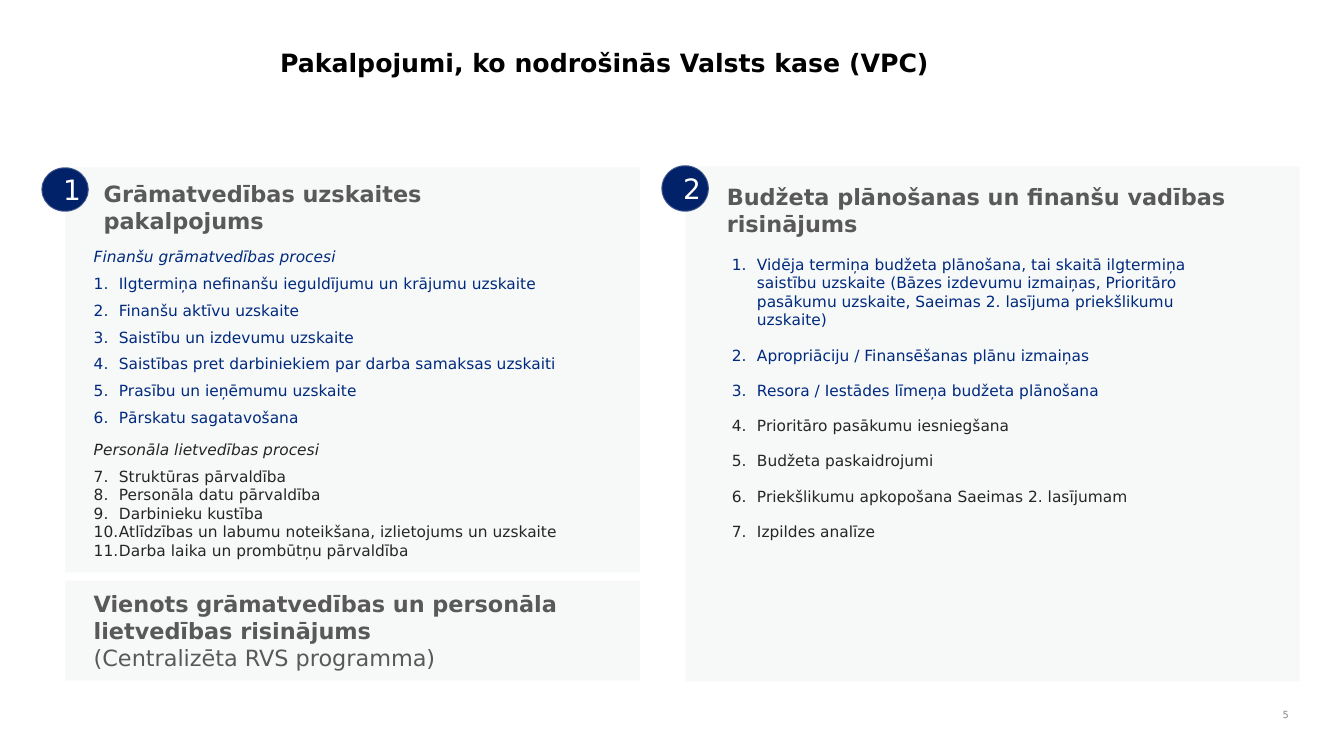
from lxml.etree import SubElement
from pptx import Presentation
from pptx.dml.color import RGBColor
from pptx.enum.shapes import MSO_SHAPE as Shape
from pptx.enum.text import MSO_ANCHOR as Anchor, PP_ALIGN as Align
from pptx.oxml.ns import qn
from pptx.util import Inches, Pt

NAVY, BLUE, DARK, GREY, PANEL = "012169", "002A7E", "262626", "595959", "CFD3D6"
HEADING = dict(size=Pt(16), bold=True)
BODY = dict(size=Pt(11))
ITALIC = dict(BODY, italic=True)
DEFAULT_INSETS = (0.1, 0.05, 0.1, 0.05)
PANEL_INSETS = (0.28, 0, 0.28, 0)


def rgb(color):
    return RGBColor.from_string(color)


class ServiceSlide:
    """Holds the font and the slide, and draws each kind of element on it."""

    def __init__(self, prs, font="DejaVu Sans"):
        self.font = font
        self.shapes = prs.slides.add_slide(prs.slide_layouts[6]).shapes

    def frame(self, shape, insets=DEFAULT_INSETS, anchor=Anchor.TOP):
        text_frame = shape.text_frame
        left, top, right, bottom = map(Inches, insets)
        layout = dict(word_wrap=True, vertical_anchor=anchor, margin_left=left,
                      margin_top=top, margin_right=right, margin_bottom=bottom)
        for name, value in layout.items():
            setattr(text_frame, name, value)
        return text_frame

    def text_box(self, box, anchor=Anchor.TOP):
        return self.frame(self.shapes.add_textbox(*map(Inches, box)), anchor=anchor)

    def shape(self, kind, box, color):
        shape = self.shapes.add_shape(kind, *map(Inches, box))
        shape.shadow.inherit = False
        shape.fill.solid()
        shape.fill.fore_color.rgb = rgb(color)
        return shape

    def opacity(self, properties, percent):
        color = next(properties.iter(qn("a:srgbClr")))
        SubElement(color, qn("a:alpha"), val=str(percent * 1000))

    def panel(self, box):
        panel = self.shape(Shape.RECTANGLE, box, PANEL)
        panel.line.fill.background()
        self.opacity(panel.element.spPr, 15)
        return panel

    def badge(self, box, number):
        badge = self.shape(Shape.OVAL, box, NAVY)
        badge.line.color.rgb = rgb(NAVY)
        badge.line.width = Pt(1.5)
        self.opacity(badge.element.spPr.find(qn("a:ln")), 75)
        frame = self.frame(badge, (0.14, 0.05, 0.1, 0.05), Anchor.MIDDLE)
        self.paragraph(frame, number, "FFFFFF", dict(size=Pt(20)), alignment=Align.CENTER)

    def run(self, paragraph, text, color, style):
        run = paragraph.add_run()
        run.text = text
        run.font.name = self.font
        run.font.color.rgb = rgb(color)
        for name, value in style.items():
            setattr(run.font, name, value)

    def paragraph(self, frame, text, color, style, alignment=Align.LEFT, **spacing):
        last = frame.paragraphs[-1]
        paragraph = frame.add_paragraph() if last.runs else last
        paragraph.alignment = alignment
        for name, value in spacing.items():
            setattr(paragraph, name, Pt(value))
        self.run(paragraph, text, color, style)
        return paragraph

    def numbered(self, frame, items, color, start=1, after=0):
        for item in items:
            paragraph = self.paragraph(frame, item, color, BODY, space_after=after)
            properties = paragraph._p.get_or_add_pPr()
            properties.set("marL", str(Inches(0.25)))
            properties.set("indent", str(-Inches(0.25)))
            SubElement(properties, qn("a:buFont"), typeface=self.font)
            SubElement(properties, qn("a:buAutoNum"), type="arabicPeriod", startAt=str(start))


def main():
    prs = Presentation()
    prs.slide_width, prs.slide_height = Inches(13.33), Inches(7.5)
    slide = ServiceSlide(prs)

    title = slide.text_box((2.68, 0.42, 7.87, 1.13))
    slide.paragraph(title, "Pakalpojumi, ko nodrošinās Valsts kase (VPC)", "000000",
                    dict(size=Pt(18), bold=True))
    page_number = slide.text_box((12.44, 6.92, 0.44, 0.33), Anchor.MIDDLE)
    slide.paragraph(page_number, "5", "898989", dict(size=Pt(7)), alignment=Align.RIGHT)

    accounting = slide.frame(slide.panel((0.65, 1.66, 5.7, 4.02)), (0.28, 0.79, 0.28, 0))
    slide.paragraph(accounting, "Finanšu grāmatvedības procesi", BLUE, ITALIC, space_after=6)
    slide.numbered(accounting, [
        "Ilgtermiņa nefinanšu ieguldījumu un krājumu uzskaite",
        "Finanšu aktīvu uzskaite",
        "Saistību un izdevumu uzskaite",
        "Saistības pret darbiniekiem par darba samaksas uzskaiti",
        "Prasību un ieņēmumu uzskaite",
        "Pārskatu sagatavošana",
    ], BLUE, after=6)
    slide.paragraph(accounting, "Personāla lietvedības procesi", DARK, ITALIC,
                    space_before=3.5, space_after=6)
    slide.numbered(accounting, [
        "Struktūras pārvaldība",
        "Personāla datu pārvaldība",
        "Darbinieku kustība",
        "Atlīdzības un labumu noteikšana, izlietojums un uzskaite",
        "Darba laika un prombūtņu pārvaldība",
    ], DARK, start=7)

    solution = slide.frame(slide.panel((0.65, 5.76, 5.7, 0.99)), PANEL_INSETS, Anchor.MIDDLE)
    solution_name = slide.paragraph(
        solution, "Vienots grāmatvedības un personāla lietvedības risinājums", GREY, HEADING)
    solution_name.add_line_break()
    slide.run(solution_name, "(Centralizēta RVS programma)", GREY, dict(size=Pt(16)))

    slide.panel((6.8, 1.65, 6.09, 5.11))
    accounting_heading = slide.text_box((0.93, 1.74, 5.49, 0.64))
    for line in ("Grāmatvedības uzskaites", "pakalpojums"):
        slide.paragraph(accounting_heading, line, GREY, HEADING)
    slide.badge((0.42, 1.67, 0.45, 0.42), "1")
    slide.badge((6.57, 1.65, 0.45, 0.44), "2")

    budget = slide.text_box((7.16, 2.48, 5.23, 2.96))
    slide.numbered(budget, [
        "Vidēja termiņa budžeta plānošana, tai skaitā ilgtermiņa saistību uzskaite "
        "(Bāzes izdevumu izmaiņas, Prioritāro pasākumu uzskaite, "
        "Saeimas 2. lasījuma priekšlikumu uzskaite)",
        "Apropriāciju / Finansēšanas plānu izmaiņas",
        "Resora / Iestādes līmeņa budžeta plānošana",
    ], BLUE, after=12)
    slide.numbered(budget, [
        "Prioritāro pasākumu iesniegšana",
        "Budžeta paskaidrojumi",
        "Priekšlikumu apkopošana Saeimas 2. lasījumam",
        "Izpildes analīze",
    ], DARK, start=4, after=12)
    budget_heading = slide.text_box((7.11, 1.77, 5.49, 0.64))
    slide.paragraph(budget_heading, "Budžeta plānošanas un finanšu vadības risinājums",
                    GREY, HEADING)

    prs.save("out.pptx")


if __name__ == "__main__":
    main()
